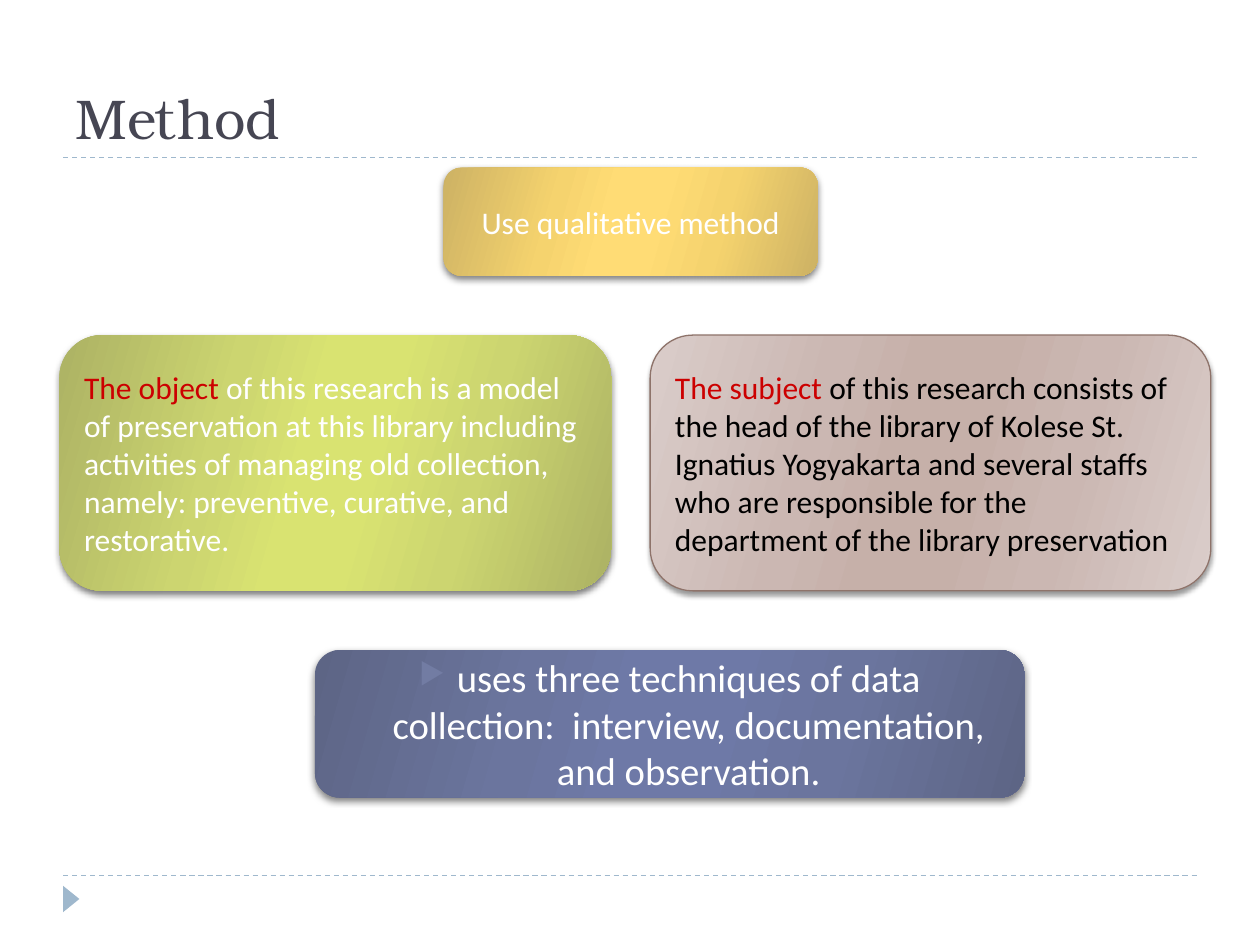
from dataclasses import dataclass
from typing import Optional

from lxml.etree import SubElement
from pptx import Presentation
from pptx.dml.color import RGBColor
from pptx.enum.dml import MSO_LINE
from pptx.enum.shapes import MSO_CONNECTOR, MSO_SHAPE
from pptx.enum.text import MSO_ANCHOR, MSO_AUTO_SIZE, PP_ALIGN
from pptx.oxml.ns import qn
from pptx.util import Inches, Pt

WHITE = RGBColor(0xFF, 0xFF, 0xFF)
BLACK = RGBColor(0x00, 0x00, 0x00)
RED = RGBColor(0xCC, 0x00, 0x00)
SLATE = RGBColor(0x46, 0x46, 0x53)
PALE_BLUE = RGBColor(0x9F, 0xB8, 0xCD)
BULLET_BLUE = RGBColor(0x72, 0x7C, 0xA3)
BROWN = RGBColor(0x8E, 0x73, 0x6A)


@dataclass
class Sheen:
    """Colours of a symmetric gradient, from the edges to the middle."""
    edge: RGBColor
    between: RGBColor
    middle: RGBColor


GOLD = Sheen(RGBColor(0xCD, 0xB2, 0x64), RGBColor(0xF5, 0xD3, 0x6E), RGBColor(0xFF, 0xDC, 0x75))
LIME = Sheen(RGBColor(0xAC, 0xB2, 0x64), RGBColor(0xCC, 0xD5, 0x70), RGBColor(0xD9, 0xE3, 0x71))
ROSE = Sheen(RGBColor(0xDA, 0xCD, 0xCA), RGBColor(0xCB, 0xB7, 0xB2), RGBColor(0xC6, 0xB0, 0xA9))
INDIGO = Sheen(RGBColor(0x5D, 0x65, 0x85), RGBColor(0x6B, 0x75, 0x9E), RGBColor(0x6E, 0x79, 0xA7))


@dataclass
class Card:
    left: float
    top: float
    width: float
    height: float
    sheen: Sheen
    runs: list[tuple[str, RGBColor]]
    size: float = 18
    align: PP_ALIGN = PP_ALIGN.LEFT
    outline: Optional[RGBColor] = None
    bulleted: bool = False


CARDS = [
    Card(3.52, 1.33, 2.97, 0.86, GOLD, [("Use qualitative method", WHITE)],
         align=PP_ALIGN.CENTER),
    Card(5.16, 2.66, 4.45, 2.03, ROSE, [
        ("The subject ", RED),
        ("of this research consists of the head of the library of Kolese St. Ignatius "
         "Yogyakarta and several staffs who are responsible for the department of the "
         "library preservation", BLACK)], outline=BROWN),
    Card(0.47, 2.66, 4.38, 2.03, LIME, [
        ("The object ", RED),
        ("of this research is a model of preservation at this library including "
         "activities of managing old collection, namely: preventive, curative, and "
         "restorative.", WHITE)]),
    Card(2.5, 5.16, 5.63, 1.17, INDIGO, [
        ("uses three techniques of data collection:  interview, documentation, "
         "and observation.", WHITE)],
         size=22.1, align=PP_ALIGN.CENTER, bulleted=True),
]


def add_color(parent, color: RGBColor):
    return SubElement(parent, qn("a:srgbClr"), val=str(color))


def fill_sheen(shape, sheen: Sheen) -> None:
    shape.fill.gradient()
    gradient = shape._element.spPr.find(qn("a:gradFill"))
    stops = gradient.find(qn("a:gsLst"))
    for stop in list(stops):
        stops.remove(stop)
    colors = (sheen.edge, sheen.between, sheen.middle)
    for percent, color in zip((0, 30, 45, 55, 73, 100), colors + colors[::-1]):
        add_color(SubElement(stops, qn("a:gs"), pos=str(percent * 1000)), color)
    gradient.find(qn("a:lin")).set("ang", str(16 * 60000))


def add_shadow(shape, opacity: int, blur: float, distance: float) -> None:
    shape.shadow.inherit = False
    effects = shape._element.spPr.find(qn("a:effectLst"))
    outer = SubElement(effects, qn("a:outerShdw"), blurRad=str(Pt(blur)),
                       dist=str(Pt(distance)), dir=str(90 * 60000), rotWithShape="0")
    SubElement(add_color(outer, BLACK), qn("a:alpha"), val=str(opacity * 1000))


def add_bullet(paragraph) -> None:
    paragraph.space_before = Pt(6)
    properties = paragraph._p.get_or_add_pPr()
    properties.set("marL", str(Inches(0.3)))
    properties.set("indent", str(Inches(-0.3)))
    add_color(SubElement(properties, qn("a:buClr")), BULLET_BLUE)
    SubElement(properties, qn("a:buSzPct"), val="76000")
    SubElement(properties, qn("a:buChar"), char="▶")


def add_card(slide, card: Card) -> None:
    shape = slide.shapes.add_shape(
        MSO_SHAPE.ROUNDED_RECTANGLE, Inches(card.left), Inches(card.top),
        Inches(card.width), Inches(card.height))
    fill_sheen(shape, card.sheen)
    if card.outline is None:
        shape.line.fill.background()
        add_shadow(shape, opacity=50, blur=4, distance=2)
    else:
        shape.line.color.rgb = card.outline
        shape.line.width = Pt(0.75)
        add_shadow(shape, opacity=40, blur=3, distance=2)

    frame = shape.text_frame
    frame.word_wrap = True
    frame.vertical_anchor = MSO_ANCHOR.MIDDLE
    paragraph = frame.paragraphs[0]
    paragraph.alignment = card.align
    if card.bulleted:
        add_bullet(paragraph)
    for text, color in card.runs:
        run = paragraph.add_run()
        run.text = text
        run.font.name = "Calibri"
        run.font.size = Pt(card.size)
        run.font.color.rgb = color


def add_dashed_rule(slide, y: float) -> None:
    rule = slide.shapes.add_connector(
        MSO_CONNECTOR.STRAIGHT, Inches(0.5), Inches(y), Inches(9.5), Inches(y))
    rule.line.color.rgb = PALE_BLUE
    rule.line.width = Pt(0.75)
    rule.line.dash_style = MSO_LINE.DASH
    SubElement(rule._element.spPr, qn("a:effectLst"))


def add_corner_marker(slide) -> None:
    marker = slide.shapes.add_shape(
        MSO_SHAPE.ISOSCELES_TRIANGLE, Inches(0.46), Inches(7.07), Inches(0.21), Inches(0.13))
    marker.rotation = 90
    marker.fill.solid()
    marker.fill.fore_color.rgb = PALE_BLUE
    marker.line.fill.background()
    marker.shadow.inherit = False


def set_title(slide, text: str) -> None:
    title = slide.shapes.title
    title.left, title.top = Inches(0.5), Inches(0.17)
    title.width, title.height = Inches(9), Inches(1.08)
    frame = title.text_frame
    frame.auto_size = MSO_AUTO_SIZE.NONE
    frame.vertical_anchor = MSO_ANCHOR.BOTTOM
    paragraph = frame.paragraphs[0]
    paragraph.alignment = PP_ALIGN.LEFT
    run = paragraph.add_run()
    run.text = text
    run.font.name = "TeX Gyre Bonum"
    run.font.size = Pt(32)
    run.font.color.rgb = SLATE


def main() -> None:
    deck = Presentation()
    deck.slide_width, deck.slide_height = Inches(10), Inches(7.5)
    slide = deck.slides.add_slide(deck.slide_layouts.get_by_name("Title Only"))
    for y in (6.95, 1.25):
        add_dashed_rule(slide, y)
    add_corner_marker(slide)
    set_title(slide, "Method")
    for card in CARDS:
        add_card(slide, card)
    deck.save("out.pptx")


if __name__ == "__main__":
    main()
